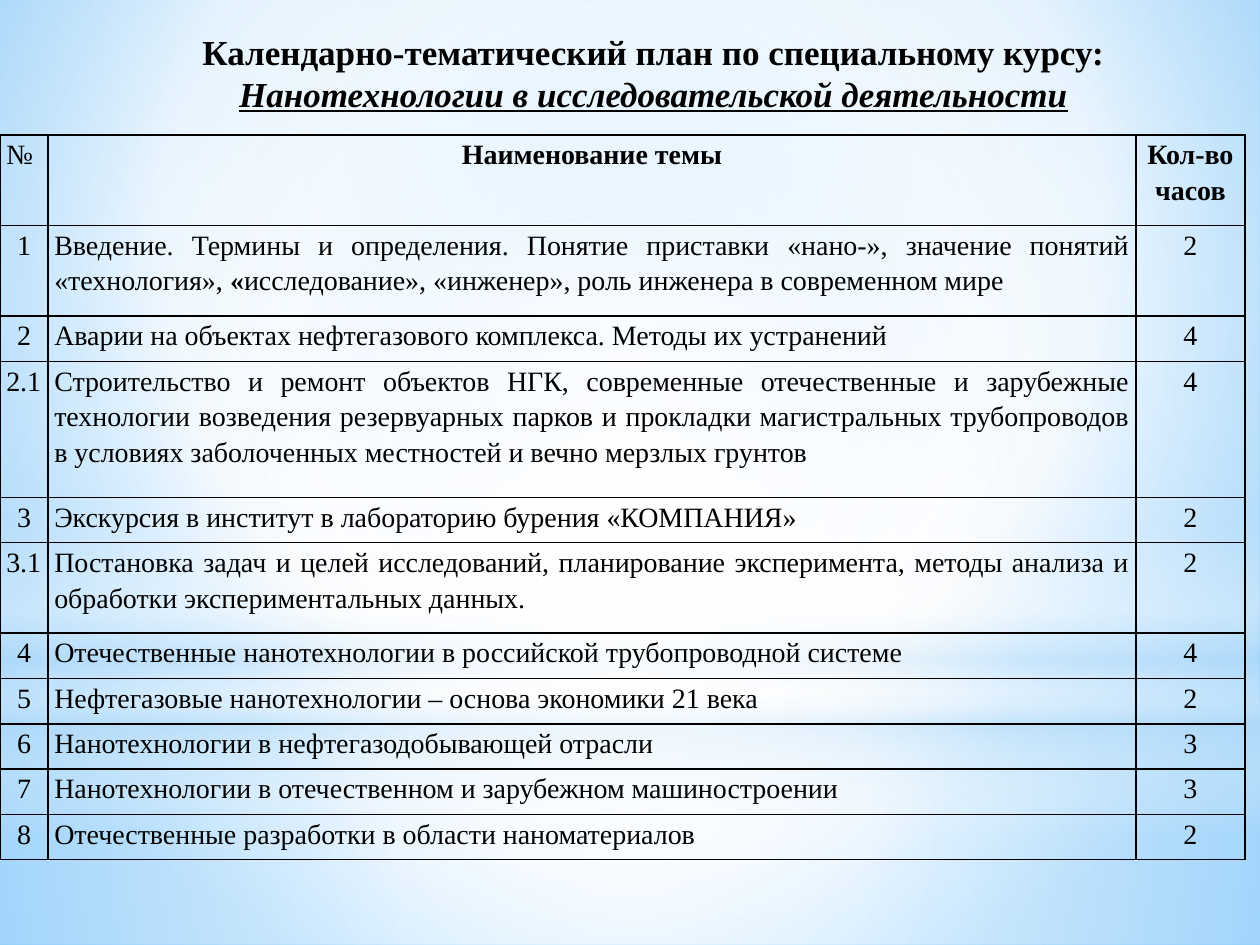
"""Build a slide with the calendar and topic plan of a nanotechnology course."""
from lxml import etree
from pptx import Presentation, util as u
from pptx.dml.color import RGBColor
from pptx.enum import shapes, text
from pptx.oxml.ns import nsdecls, qn

BLACK = RGBColor(0, 0, 0)
WHITE = RGBColor(0xFF, 0xFF, 0xFF)
PALE = RGBColor(0xB4, 0xDC, 0xFA)
SKY = RGBColor(0x9E, 0xD5, 0xFF)
AZURE = RGBColor(0x5B, 0xB9, 0xFF)
FONT = "Times New Roman"
SCALE = u.Inches(1) / 126

TITLE_BOX = (93, 24, 1121, 97)
TITLE = [
    ("Календарно-тематический план по специальному курсу:", False),
    ("Нанотехнологии в исследовательской деятельности", True),
]

HEADER = ("№", [("Наименование темы", True)], "Кол-во часов", 2)
TOPICS = [
    ("1", [("Введение. Термины и определения. Понятие приставки «нано-», "
            "значение понятий «технология»,", False),
           (" «", True),
           ("исследование», «инженер», роль инженера в современном мире", False)], "2", 2),
    ("2", [("Аварии на объектах нефтегазового комплекса. Методы их устранений", False)], "4", 1),
    ("2.1", [("Строительство и ремонт объектов НГК, современные отечественные и зарубежные "
              "технологии возведения резервуарных парков и прокладки магистральных "
              "трубопроводов в условиях заболоченных местностей и вечно мерзлых грунтов",
              False)], "4", 3),
    ("3", [("Экскурсия в институт в лабораторию бурения «КОМПАНИЯ»", False)], "2", 1),
    ("3.1", [("Постановка задач и целей исследований, планирование эксперимента, методы "
              "анализа и обработки экспериментальных данных.", False)], "2", 2),
    ("4", [("Отечественные нанотехнологии в российской трубопроводной системе", False)], "4", 1),
    ("5", [("Нефтегазовые нанотехнологии – основа экономики 21 века", False)], "2", 1),
    ("6", [("Нанотехнологии в нефтегазодобывающей отрасли", False)], "3", 1),
    ("7", [("Нанотехнологии в отечественном и зарубежном машиностроении", False)], "3", 1),
    ("8", [("Отечественные разработки в области наноматериалов", False)], "2", 1),
]
COLUMNS = (48, 1088, 109)
TABLE_TOP, TABLE_HEIGHT = 135, 725

CENTRE = (50, 50, 50, 50)
BACKDROP = ([(0, SKY, 100), (60, WHITE, 100), (100, AZURE, 100)], (20, 10, 20, 60))
RECT, OVAL = shapes.MSO_SHAPE.RECTANGLE, shapes.MSO_SHAPE.OVAL
GLOWS = [
    (RECT, (0, 703, 1260, 242), [(0, WHITE, 91), (37, WHITE, 76), (100, PALE, 79)], CENTRE),
    (RECT, (0, 0, 1260, 703), [(0, WHITE, 89), (48, WHITE, 62), (100, PALE, 79)], CENTRE),
    (RECT, (0, 519, 1260, 315), [(0, WHITE, 0), (29, WHITE, 30), (45, PALE, 40),
                                 (55, WHITE, 26), (65, PALE, 60), (100, WHITE, 0)], None),
    (OVAL, (0, 220, 1260, 703), [(0, WHITE, 100), (56, WHITE, 0)], CENTRE),
]


def emu(*lengths):
    return [u.Emu(round(length * SCALE)) for length in lengths]


def set_gradient(holder, stops, focus):
    """Replace the solid fill in holder by a circular or vertical gradient."""
    stop_xml = "".join(
        f'<a:gs pos="{pos * 1000}"><a:srgbClr val="{colour}">'
        f'<a:alpha val="{opacity * 1000}"/></a:srgbClr></a:gs>'
        for pos, colour, opacity in stops)
    if focus:
        edges = " ".join(f'{side}="{share * 1000}"' for side, share in zip("ltrb", focus))
        course = f'<a:path path="circle"><a:fillToRect {edges}/></a:path>'
    else:
        course = '<a:lin ang="5400000" scaled="0"/>'
    gradient = etree.fromstring(
        f'<a:gradFill {nsdecls("a")} rotWithShape="1"><a:gsLst>{stop_xml}</a:gsLst>'
        f'{course}</a:gradFill>')
    holder.replace(holder.find(qn("a:solidFill")), gradient)


def add_run(paragraph, words, size, bold=False, accent=False):
    run = paragraph.add_run()
    run.text = words
    font = run.font
    font.name, font.size, font.bold = FONT, u.Pt(size), bold
    font.color.rgb = BLACK
    if accent:
        font.italic = font.underline = True


def add_borders(cell):
    properties = cell._tc.get_or_add_tcPr()
    for position, side in enumerate(("lnL", "lnR", "lnT", "lnB")):
        properties.insert(position, etree.fromstring(
            f'<a:{side} {nsdecls("a")} w="12700"><a:solidFill>'
            f'<a:srgbClr val="{BLACK}"/></a:solidFill></a:{side}>'))


def fill_cell(cell, runs, align):
    cell.margin_left = cell.margin_right = u.Inches(0.05)
    cell.margin_top = cell.margin_bottom = 0
    cell.fill.background()
    add_borders(cell)
    paragraph = cell.text_frame.paragraphs[0]
    paragraph.alignment, paragraph.line_spacing = align, 1.15
    for words, bold in runs:
        add_run(paragraph, words, 16, bold)


def add_backdrop(slide):
    slide.background.fill.solid()
    set_gradient(slide.element.find(".//" + qn("p:bgPr")), *BACKDROP)
    for preset, box, stops, focus in GLOWS:
        glow = slide.shapes.add_shape(preset, *emu(*box))
        glow.shadow.inherit = False
        glow.line.fill.background()
        glow.fill.solid()
        set_gradient(glow.element.spPr, stops, focus)


def add_plan(slide):
    rows = [HEADER] + TOPICS
    lines = sum(row[3] for row in rows)
    plan = slide.shapes.add_table(
        len(rows), len(COLUMNS), *emu(0, TABLE_TOP, sum(COLUMNS), TABLE_HEIGHT)).table
    plan.first_row = plan.horz_banding = False
    for column, width in zip(plan.columns, emu(*COLUMNS)):
        column.width = width
    center, justify = text.PP_ALIGN.CENTER, text.PP_ALIGN.JUSTIFY
    for index, (number, topic, hours, height) in enumerate(rows):
        heading = index == 0
        plan.rows[index].height = emu(TABLE_HEIGHT * height / lines)[0]
        fill_cell(plan.cell(index, 0), [(number, False)],
                  center if number.isdigit() else justify)
        fill_cell(plan.cell(index, 1), topic, center if heading else justify)
        fill_cell(plan.cell(index, 2), [(hours, heading)], center)


def add_title(slide):
    title = slide.shapes.title
    slide.shapes.element.append(title.element)
    title.left, title.top, title.width, title.height = emu(*TITLE_BOX)
    frame = title.text_frame
    frame.word_wrap = True
    frame.auto_size = text.MSO_AUTO_SIZE.SHAPE_TO_FIT_TEXT
    frame.vertical_anchor = text.MSO_ANCHOR.MIDDLE
    for index, (words, accent) in enumerate(TITLE):
        paragraph = frame.add_paragraph() if index else frame.paragraphs[0]
        paragraph.alignment = text.PP_ALIGN.CENTER
        add_run(paragraph, words, 20, True, accent)


def main():
    deck = Presentation()
    deck.slide_width, deck.slide_height = emu(1260, 945)
    slide = deck.slides.add_slide(deck.slide_layouts[5])
    add_backdrop(slide)
    add_plan(slide)
    add_title(slide)
    deck.save("out.pptx")


if __name__ == "__main__":
    main()
